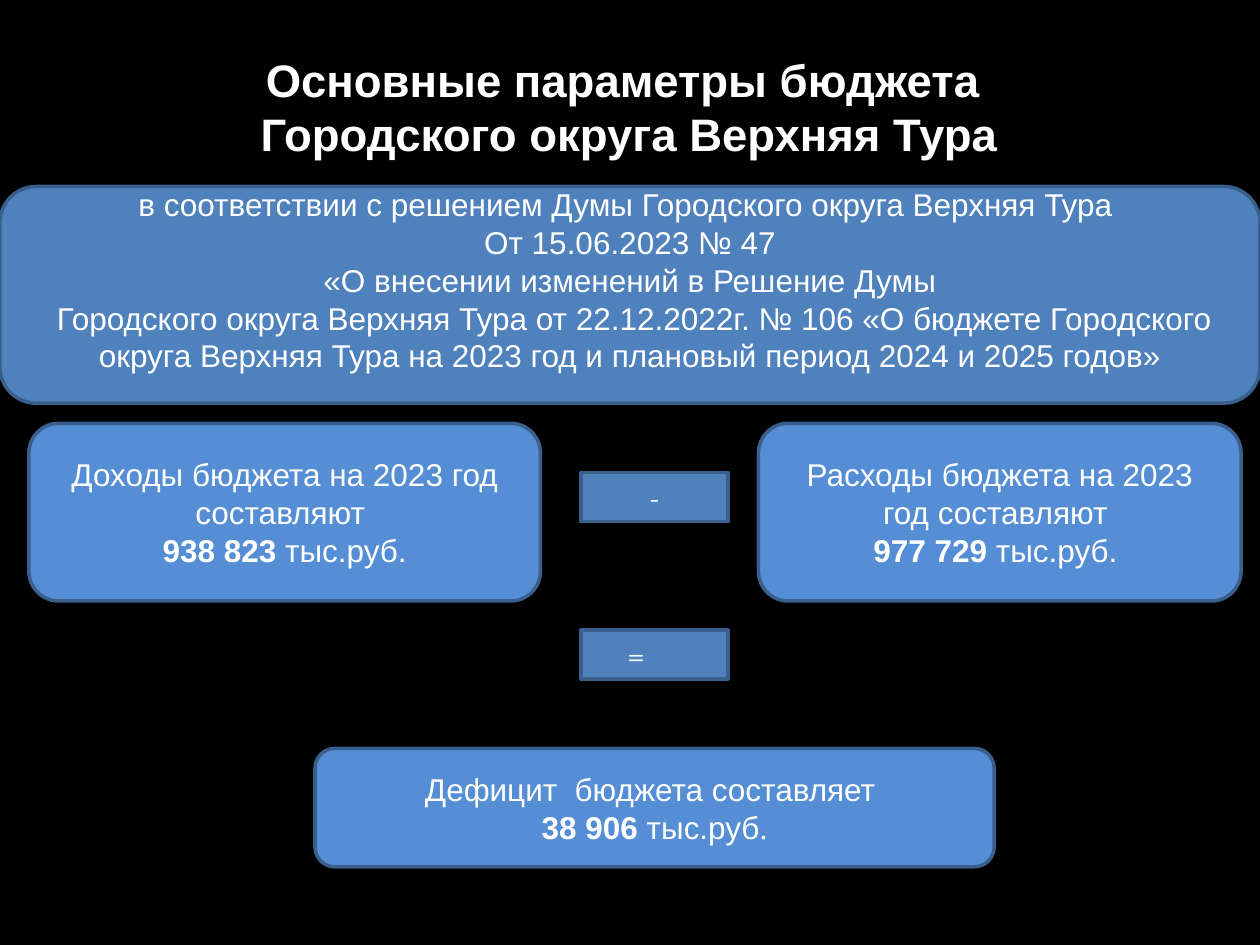
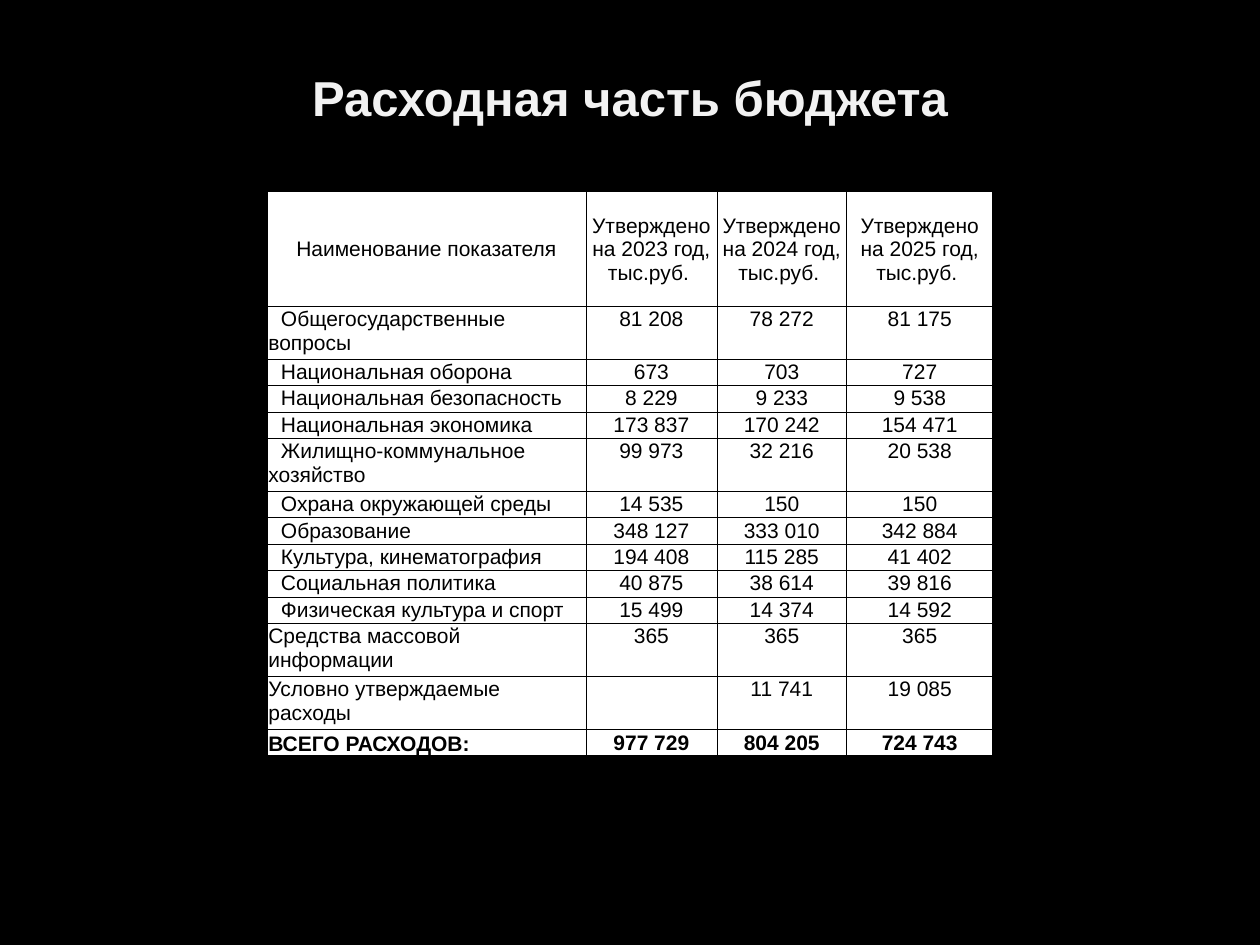
"""Build two slides on the budget of a town district."""
from dataclasses import dataclass
from typing import NamedTuple

from lxml import etree
from pptx import Presentation
from pptx.dml.color import RGBColor
from pptx.enum.shapes import MSO_SHAPE
from pptx.enum.text import MSO_ANCHOR, MSO_AUTO_SIZE, PP_ALIGN
from pptx.oxml.ns import qn
from pptx.util import Inches, Pt

ROUND, RECT = MSO_SHAPE.ROUNDED_RECTANGLE, MSO_SHAPE.RECTANGLE
CENTER, LEFT = PP_ALIGN.CENTER, PP_ALIGN.LEFT
TOP, MIDDLE, BOTTOM = MSO_ANCHOR.TOP, MSO_ANCHOR.MIDDLE, MSO_ANCHOR.BOTTOM
NO_FIT = MSO_AUTO_SIZE.NONE

BLACK, WHITE, PALE = "000000", "FFFFFF", "F2F2F2"
BLUE, SKY, NAVY = "4F81BD", "558ED5", "3A5F8C"
SANS, SERIF, ROMAN = "Arial", "Cambria", "Times New Roman"

COLS = (2.53, 1.04, 1.03, 1.16)
HEAD, ROW, TALL = 0.91, 0.21, 0.42
YEARS = (2023, 2024, 2025)


class Run(NamedTuple):
    """Text with its own face and weight."""
    text: str
    bold: bool = False
    name: str = SANS


class Item(NamedTuple):
    """A spending line of the table."""
    label: str
    sums: tuple[str, ...]
    tall: bool = False
    inset: bool = True


@dataclass
class Box:
    """A filled shape with centred lines of runs."""
    at: tuple[float, ...]
    lines: tuple[tuple[Run, ...], ...]
    fill: str = SKY
    kind: int = ROUND
    pads: tuple[float, ...] = (0.1, 0.05, 0.1, 0.05)


SIGN_X, SIGN_W, SIGN_H = 4.61, 1.17, 0.39
CARD_Y, CARD_H = 3.36, 1.41

BOXES = (
    Box((0.23, CARD_Y, 4.06, CARD_H), (
        (Run("Доходы бюджета на 2023 год составляют "),),
        (Run(" "), Run("938 823 ", True), Run("тыс.руб. ")))),
    Box((6.02, CARD_Y, 3.83, CARD_H), (
        (Run("Расходы бюджета на 2023 год составляют "),),
        (Run("977 729 ", True), Run("тыс.руб. ")))),
    Box((2.5, 5.94, 5.39, 0.94), (
        (Run("Дефицит  бюджета составляет "),),
        (Run("38 906 ", True), Run("тыс.руб"), Run(".", name=ROMAN)))),
    Box((SIGN_X, 3.75, SIGN_W, SIGN_H), ((Run("-", name=SERIF),),),
        BLUE, RECT),
    Box((SIGN_X, 5, SIGN_W, SIGN_H), ((Run("=", name=SERIF),),),
        BLUE, RECT, (0.1, 0.05, 0.39, 0.05)),
    Box((0, 1.48, 10, 1.72), (
        (Run("в соответствии с решением Думы Городского округа "
             "Верхняя Тура "),),
        (Run("От 15.06.2023 № 47"),),
        (Run("«О внесении изменений в Решение Думы"),),
        (Run(" Городского округа Верхняя Тура от 22.12.2022г. № 106 "
             "«О бюджете Городского округа Верхняя Тура на 2023 год "
             "и плановый период 2024 и 2025 годов»"),)),
        BLUE, pads=(0.1, 0.05, 0.1, 0.29)),
)

ITEMS = (
    Item("Общегосударственные вопросы", ("81 208", "78 272", "81 175"), True),
    Item("Национальная оборона", ("673", "703", "727")),
    Item("Национальная безопасность", ("8 229", "9 233", "9 538")),
    Item("Национальная экономика", ("173 837", "170 242", "154 471")),
    Item("Жилищно-коммунальное хозяйство",
         ("99 973", "32 216", "20 538"), True),
    Item("Охрана окружающей среды", ("14 535", "150", "150")),
    Item("Образование", ("348 127", "333 010", "342 884")),
    Item("Культура, кинематография", ("194 408", "115 285", "41 402")),
    Item("Социальная политика", ("40 875", "38 614", "39 816")),
    Item("Физическая культура и спорт", ("15 499", "14 374", "14 592")),
    Item("Средства массовой информации", ("365", "365", "365"), True, False),
    Item("Условно утверждаемые расходы", ("", "11 741", "19 085"),
         True, False),
    Item("ВСЕГО РАСХОДОВ:", ("977 729", "804 205", "724 743"), inset=False),
)


def rgb(code: str) -> RGBColor:
    """Turn a hex string into a colour."""
    return RGBColor.from_string(code)


def assign(thing, **values) -> None:
    """Set each named attribute of a thing."""
    for key, value in values.items():
        setattr(thing, key, value)


def style(run, size: float, color: str, bold: bool, name: str = SANS) -> None:
    """Format the font of a run."""
    assign(run.font, size=Pt(size), bold=bold, name=name)
    run.font.color.rgb = rgb(color)


def pad(thing, sides: tuple[float, ...]) -> None:
    """Set left, top, right and bottom margins in inches."""
    for side, gap in zip(("left", "top", "right", "bottom"), sides):
        setattr(thing, f"margin_{side}", Inches(gap))


def start(deck, at: tuple[float, ...], text: str, size: float, color: str):
    """Add a slide with a bold centred title."""
    slide = deck.slides.add_slide(deck.slide_layouts[5])
    title = slide.shapes.title
    spots = zip(("left", "top", "width", "height"), map(Inches, at))
    assign(title, **dict(spots))
    frame = title.text_frame
    assign(frame, text=text, word_wrap=True, auto_size=NO_FIT,
           vertical_anchor=MIDDLE)
    para = frame.paragraphs[0]
    para.alignment = CENTER
    for run in para.runs:
        style(run, size, color, True)
    return slide


def draw(slide, box: Box) -> None:
    """Draw a box and its text."""
    shape = slide.shapes.add_shape(box.kind, *map(Inches, box.at))
    shape.shadow.inherit = False
    shape.fill.solid()
    shape.fill.fore_color.rgb = rgb(box.fill)
    shape.line.color.rgb = rgb(NAVY)
    shape.line.width = Pt(2)
    frame = shape.text_frame
    assign(frame, word_wrap=True, vertical_anchor=MIDDLE)
    pad(frame, box.pads)
    for index, line in enumerate(box.lines):
        para = frame.add_paragraph() if index else frame.paragraphs[0]
        para.alignment = CENTER
        for part in line:
            run = para.add_run()
            run.text = part.text
            style(run, 18, WHITE, part.bold, part.name)


def edge(cell) -> None:
    """Give a cell thin black borders."""
    props = cell._tc.get_or_add_tcPr()
    for tag in ("a:lnL", "a:lnR", "a:lnT", "a:lnB"):
        line = etree.SubElement(props, qn(tag), w=str(Pt(0.5)))
        fill = etree.SubElement(line, qn("a:solidFill"))
        etree.SubElement(fill, qn("a:srgbClr"), val=BLACK)


def put(cell, text: str, align: int, anchor: int,
        bold: bool = False, inset: bool = False) -> None:
    """Fill a table cell and format it."""
    edge(cell)
    cell.fill.solid()
    cell.fill.fore_color.rgb = rgb(WHITE)
    assign(cell, text=text, vertical_anchor=anchor)
    pad(cell, (0.01, 0.01, 0.01, 0))
    para = cell.text_frame.paragraphs[0]
    para.alignment = align
    if inset:
        para._p.get_or_add_pPr().set("indent", str(Inches(0.1)))
    for run in para.runs:
        style(run, 12, BLACK, bold)


def tabulate(slide) -> None:
    """Draw the table of spending."""
    rows = [HEAD] + [TALL if item.tall else ROW for item in ITEMS]
    size = (2.12, 1.52, sum(COLS), sum(rows))
    table = slide.shapes.add_table(
        len(rows), len(COLS), *map(Inches, size)).table
    assign(table, first_row=False, horz_banding=False)
    for col, width in zip(table.columns, COLS):
        col.width = Inches(width)
    for row, height in zip(table.rows, rows):
        row.height = Inches(height)
    heads = ["Наименование показателя"]
    heads += [f"Утверждено на {year} год, тыс.руб. " for year in YEARS]
    for col, text in enumerate(heads):
        put(table.cell(0, col), text, CENTER, MIDDLE)
    for row, item in enumerate(ITEMS, 1):
        last = row == len(ITEMS)
        put(table.cell(row, 0), item.label, LEFT, BOTTOM if last else TOP,
            last, item.inset)
        for col, text in enumerate(item.sums, 1):
            put(table.cell(row, col), text, CENTER, MIDDLE if last else TOP,
                last)


def main() -> None:
    """Build and save the deck."""
    deck = Presentation()
    assign(deck, slide_width=Inches(10), slide_height=Inches(7.5))
    back = deck.slide_master.background.fill
    back.solid()
    back.fore_color.rgb = rgb(BLACK)
    slide = start(deck, (0.23, 0.29, 9.53, 1.11),
                  "Основные параметры бюджета \vГородского округа Верхняя Тура",
                  26, WHITE)
    for box in BOXES:
        draw(slide, box)
    slide = start(deck, (0.5, 0.29, 9, 0.96), "Расходная часть бюджета",
                  28, PALE)
    tabulate(slide)
    deck.save("out.pptx")


if __name__ == "__main__":
    main()
